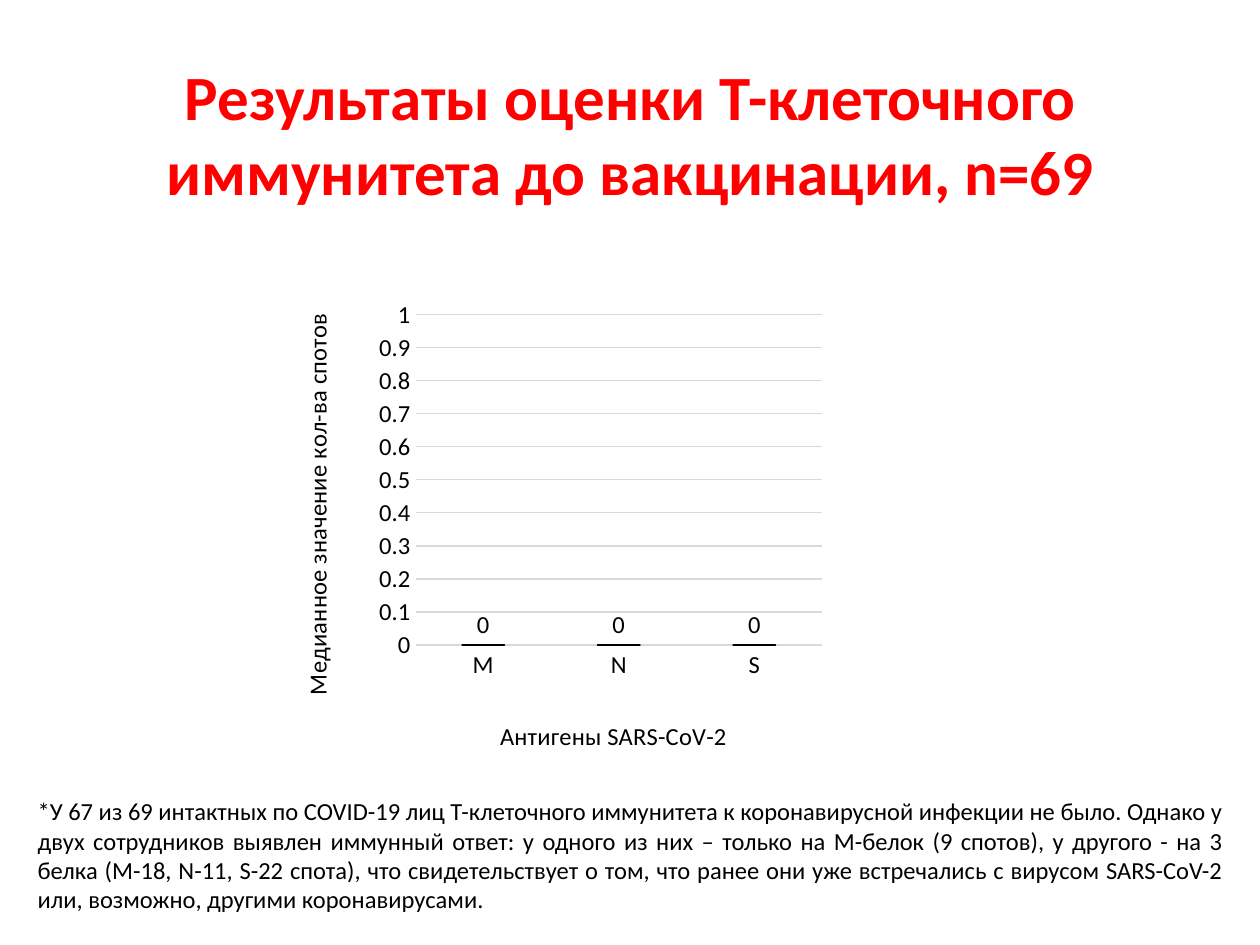
from lxml import etree
from pptx import Presentation
from pptx import util as u
from pptx.chart.data import CategoryChartData
from pptx.dml.color import RGBColor
from pptx.enum import chart as ch, text
from pptx.oxml.ns import qn

RED = RGBColor(0xFF, 0, 0)
BLACK = RGBColor(0, 0, 0)
GREEN = RGBColor(0x92, 0xD0, 0x50)
GREY = RGBColor(0xD9, 0xD9, 0xD9)

# Content
TITLE = "Результаты оценки Т-клеточного иммунитета до вакцинации, n=69"
DATA = {"M": 0, "N": 0, "S": 0}
CAT_NAME = "Антигены SARS-CoV-2"
VAL_NAME = "Медианное значение кол-ва спотов"
NOTE = (
    "*У 67 из 69 интактных по COVID-19 лиц Т-клеточного иммунитета к "
    "коронавирусной инфекции не было. Однако у двух сотрудников выявлен "
    "иммунный ответ: у одного из них – только на М-белок (9 спотов), у "
    "другого - на 3 белка (М-18, N-11, S-22 спота), что свидетельствует о "
    "том, что ранее они уже встречались с вирусом SARS-CoV-2 или, возможно, "
    "другими коронавирусами."
)

# Formats and places
HEAD = {"name": "Calibri", "size": u.Pt(36), "bold": True}
BODY = {"name": "Calibri", "size": u.Pt(14), "bold": False}
TITLE_BOX = (0.88, 0.26, 8.25, 1.59)
CHART_BOX = (2.24, 1.67, 5.29, 4.6)
NOTE_BOX = (0.2, 6.27, 9.61, 1.04)
PLOT = {"layoutTarget": "inner", "xMode": "edge", "yMode": "edge",
        "x": 0.2, "y": 0.18, "w": 0.61, "h": 0.57}


def box(dims):
    return [u.Inches(d) for d in dims]


def style(font, form, color=BLACK):
    for key, val in form.items():
        setattr(font, key, val)
    font.color.rgb = color


def rule(line, color):
    line.color.rgb = color
    line.width = u.Pt(0.75)


def place(node, spots, index):
    """Give a chart part a manual layout."""
    for old in node.findall(qn("c:layout")):
        node.remove(old)
    lay = etree.Element(qn("c:layout"))
    man = etree.SubElement(lay, qn("c:manualLayout"))
    for key, val in spots.items():
        etree.SubElement(man, qn("c:" + key)).set("val", str(val))
    node.insert(index, lay)


def label(axis, words, x, y):
    frame = axis.axis_title.text_frame
    frame.text = words
    style(frame.paragraphs[0].runs[0].font, BODY)
    spots = {"xMode": "edge", "yMode": "edge", "x": x, "y": y}
    place(axis.axis_title._element, spots, 1)
    axis.major_tick_mark = axis.minor_tick_mark = ch.XL_TICK_MARK.NONE
    style(axis.tick_labels.font, BODY)


deck = Presentation()
deck.slide_width, deck.slide_height = box((10, 7.5))
slide = deck.slides.add_slide(deck.slide_layouts[5])

# Title
title = slide.shapes.title
title.left, title.top, title.width, title.height = box(TITLE_BOX)
title.text_frame.text = TITLE
title.text_frame.vertical_anchor = text.MSO_ANCHOR.MIDDLE
para = title.text_frame.paragraphs[0]
para.alignment = text.PP_ALIGN.CENTER
style(para.runs[0].font, HEAD, RED)

# Chart
data = CategoryChartData()
data.categories = list(DATA)
data.add_series("Series 1", list(DATA.values()))
kind = ch.XL_CHART_TYPE.COLUMN_CLUSTERED
chart = slide.shapes.add_chart(kind, *box(CHART_BOX), data).chart
chart.has_legend = chart.has_title = False
style(chart.font, BODY)
place(chart._chartSpace.chart.plotArea, PLOT, 0)

# Columns
plot = chart.plots[0]
plot.gap_width, plot.overlap, plot.vary_by_categories = 219, -27, False
bars = plot.series[0]
bars.format.fill.solid()
bars.format.fill.fore_color.rgb = GREEN
rule(bars.format.line, BLACK)
tags = bars.data_labels
tags.show_value = True
tags.position = ch.XL_LABEL_POSITION.OUTSIDE_END
style(tags.font, BODY)

# Axes
cat, val = chart.category_axis, chart.value_axis
label(cat, CAT_NAME, 0.32, 0.87)
label(val, VAL_NAME, 0.02, 0.17)
rule(cat.format.line, GREY)
val.format.line.fill.background()
val.minimum_scale, val.maximum_scale, val.major_unit = 0, 1, 0.1
rule(val.major_gridlines.format.line, GREY)

# Footnote
frame = slide.shapes.add_textbox(*box(NOTE_BOX)).text_frame
frame.word_wrap = True
frame.auto_size = text.MSO_AUTO_SIZE.SHAPE_TO_FIT_TEXT
frame.text = NOTE
para = frame.paragraphs[0]
para.alignment = text.PP_ALIGN.JUSTIFY
style(para.runs[0].font, BODY)

deck.save("out.pptx")
